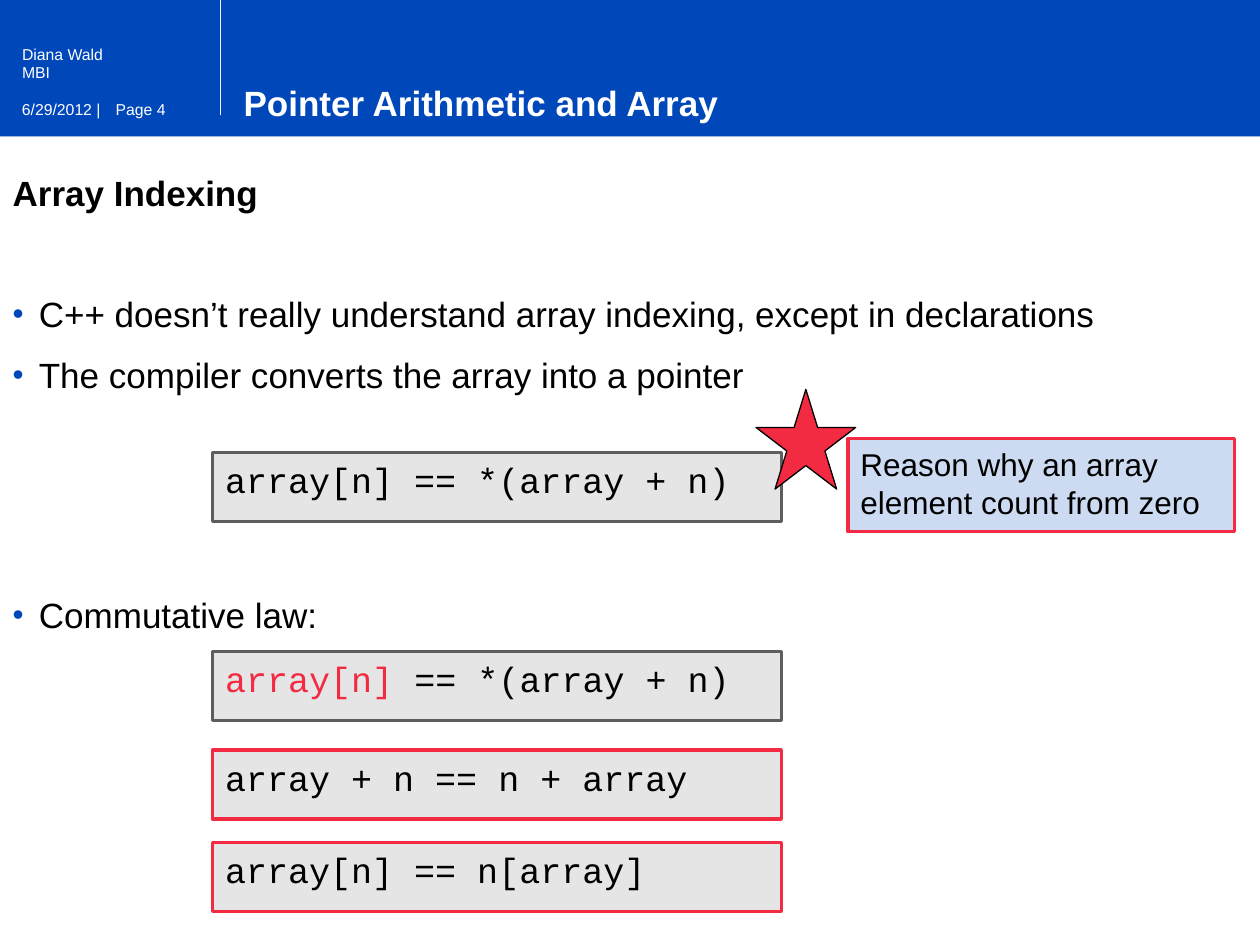
from pptx import Presentation
from pptx.dml.color import RGBColor
from pptx.enum.shapes import MSO_CONNECTOR, MSO_SHAPE
from pptx.enum.text import MSO_ANCHOR, MSO_AUTO_SIZE, PP_ALIGN
from pptx.oxml.ns import qn
from pptx.util import Pt
from lxml.etree import SubElement

COLORS = {
    "blue": "0047B9", "pale": "CCDBF1", "white": "FFFFFF", "black": "000000",
    "gray": "E5E5E5", "dark": "5D5D5D", "red": "F32B42",
}
SMALL = {"size": Pt(9), "name": "Arial", "bold": False}
HEADING = {"size": Pt(20), "name": "Arial", "bold": True}
BODY = {"size": Pt(20), "name": "Arial", "bold": False}
CODE = {"size": Pt(20), "name": "Courier New", "bold": False}
CALLOUT = {"size": Pt(18), "name": "Arial", "bold": False}


def rgb(color):
    """Return the named colour."""
    return RGBColor.from_string(COLORS[color])


def format_font(font, style, color):
    """Apply a dict of font values and a colour."""
    for attribute, value in style.items():
        setattr(font, attribute, value)
    font.color.rgb = rgb(color)


def format_frame(frame):
    """Give a text frame top anchoring, wrapping and a fixed size."""
    values = {"word_wrap": True, "auto_size": MSO_AUTO_SIZE.NONE,
              "vertical_anchor": MSO_ANCHOR.TOP}
    for attribute, value in values.items():
        setattr(frame, attribute, value)


def write_line(frame, runs, style):
    """Write one left-aligned line of (text, colour) runs."""
    format_frame(frame)
    paragraph = frame.paragraphs[0]
    paragraph.alignment = PP_ALIGN.LEFT
    for text, color in runs:
        run = paragraph.add_run()
        run.text = text
        format_font(run.font, style, color)


def add_box(slide, bounds, fill, line=None, width=2, kind=MSO_SHAPE.RECTANGLE):
    """Add a filled preset shape with an optional outline."""
    shape = slide.shapes.add_shape(kind, *map(Pt, bounds))
    shape.shadow.inherit = False
    shape.fill.solid()
    shape.fill.fore_color.rgb = rgb(fill)
    if line:
        shape.line.color.rgb = rgb(line)
        shape.line.width = Pt(width)
    else:
        shape.line.fill.background()
    return shape


def add_label(slide, bounds, text):
    """Add a small white label to the header."""
    box = slide.shapes.add_textbox(*map(Pt, bounds))
    write_line(box.text_frame, [(text, "white")], SMALL)


def add_divider(slide, x, bottom):
    """Add the vertical header line."""
    line = slide.shapes.add_connector(MSO_CONNECTOR.STRAIGHT, Pt(x), Pt(bottom), Pt(x), Pt(0))
    line.line.color.rgb = rgb("white")
    line.line.width = Pt(0.9)
    SubElement(line.element.spPr, qn("a:effectLst"))


def place(placeholder, bounds):
    """Move a placeholder and bring it to the front."""
    for attribute, value in zip(("left", "top", "width", "height"), bounds):
        setattr(placeholder, attribute, Pt(value))
    placeholder.element.getparent().append(placeholder.element)


def set_bullet(paragraph, bulleted):
    """Set the hanging indent and blue bullet, or remove both."""
    properties = paragraph._p.get_or_add_pPr()
    indent = Pt(15) if bulleted else 0
    properties.set("marL", str(indent))
    properties.set("indent", str(-indent))
    if bulleted:
        color = SubElement(properties, qn("a:buClr"))
        SubElement(color, qn("a:srgbClr"), val=COLORS["blue"])
        SubElement(properties, qn("a:buSzPct"), val="90000")
        SubElement(properties, qn("a:buChar"), char="•")
    else:
        SubElement(properties, qn("a:buNone"))


def fill_body(body, items):
    """Write the heading and bullets with their spacing."""
    format_frame(body.text_frame)
    for index, (text, space, style) in enumerate(items):
        paragraph = body.text_frame.paragraphs[0] if index == 0 else body.text_frame.add_paragraph()
        paragraph.text = text
        set_bullet(paragraph, style is BODY)
        paragraph.alignment = PP_ALIGN.LEFT
        paragraph.space_before = Pt(space)
        paragraph.space_after = Pt(6)
        format_font(paragraph.font, style, "black")


def add_code(slide, top, runs, line):
    """Add a gray code box."""
    box = add_box(slide, (121.5, top, 325, 39.5), "gray", line)
    write_line(box.text_frame, runs, CODE)


def main():
    """Build and save the slide."""
    presentation = Presentation()
    presentation.slide_width, presentation.slide_height = Pt(720), Pt(540)
    slide = presentation.slides.add_slide(presentation.slide_layouts[1])
    slide.background.fill.solid()
    slide.background.fill.fore_color.rgb = rgb("pale")

    add_box(slide, (0, 78, 720, 462), "white")
    add_box(slide, (0, 0, 720, 78), "blue")
    add_divider(slide, 126, 66)
    add_label(slide, (59, 53.5, 73, 36), "Page 4")
    add_label(slide, (5.5, 53.5, 66, 29), "6/29/2012 |")
    add_label(slide, (5.5, 21.8, 135, 18), "Diana Wald")
    add_label(slide, (5.5, 32.4, 96, 18), "MBI")

    title, body = slide.placeholders
    place(title, (132, 43.2, 444, 31))
    write_line(title.text_frame, [("Pointer Arithmetic and Array", "white")], HEADING)
    place(body, (0, 94.5, 720, 430))
    fill_body(body, [
        ("Array Indexing", 0, HEADING),
        ("C++ doesn’t really understand array indexing, except in declarations", 39, BODY),
        ("The compiler converts the array into a pointer", 5, BODY),
        ("Commutative law:", 107, BODY),
    ])

    add_code(slide, 258.5, [("array[n] == *(array + n)", "black")], "dark")
    callout = add_box(slide, (484.6, 250.6, 221, 53.3), "pale", "red")
    write_line(callout.text_frame, [("Reason why an array element count from zero", "black")], CALLOUT)
    add_box(slide, (432, 222.5, 57, 57), "red", "black", 0.75, MSO_SHAPE.STAR_5_POINT)
    add_code(slide, 372.2, [("array[n] ", "red"), ("== *(array + n)", "black")], "dark")
    add_code(slide, 428.6, [("array + n == n + array", "black")], "red")
    add_code(slide, 481.4, [("array[n] == n[array]", "black")], "red")

    presentation.save("out.pptx")


if __name__ == "__main__":
    main()
